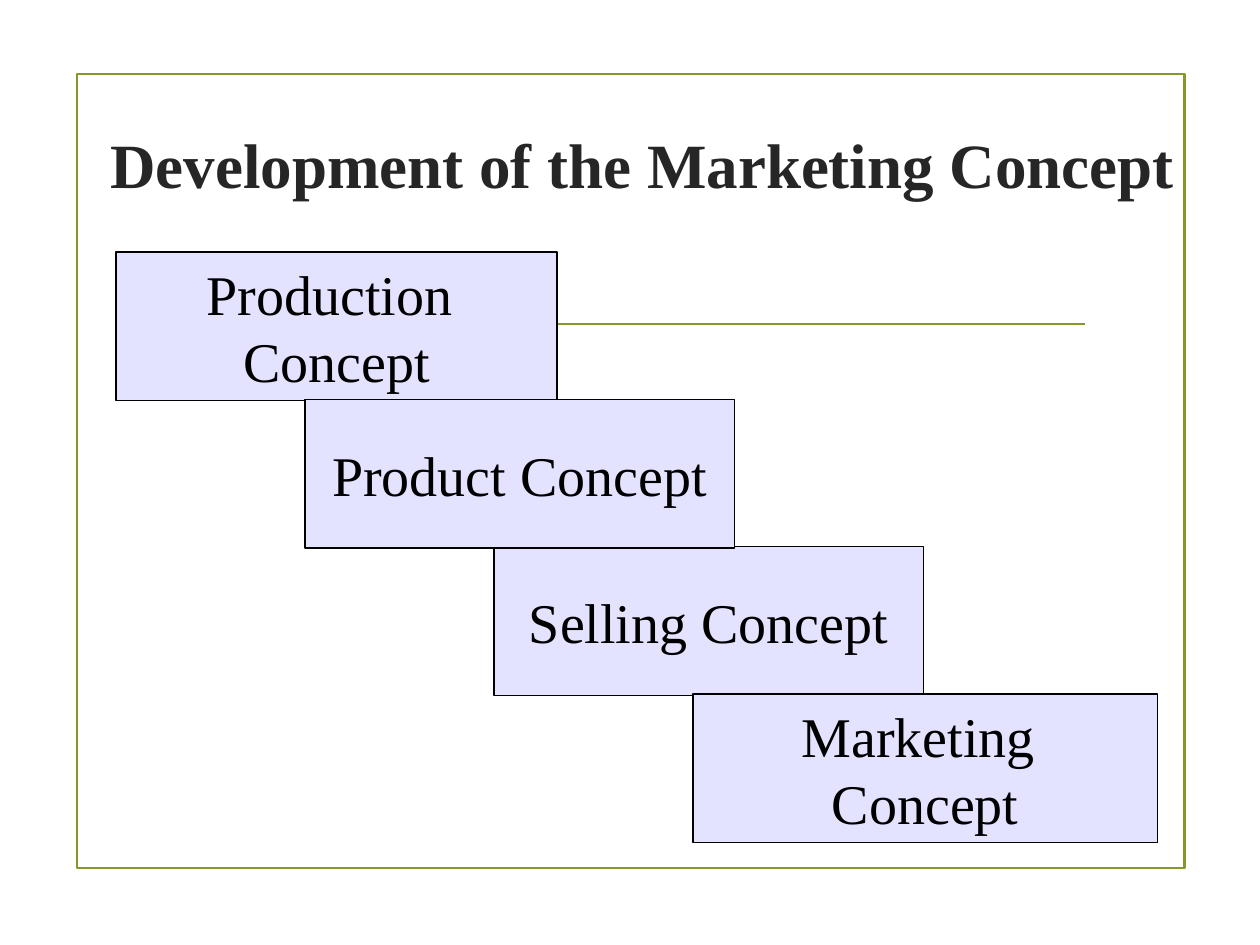
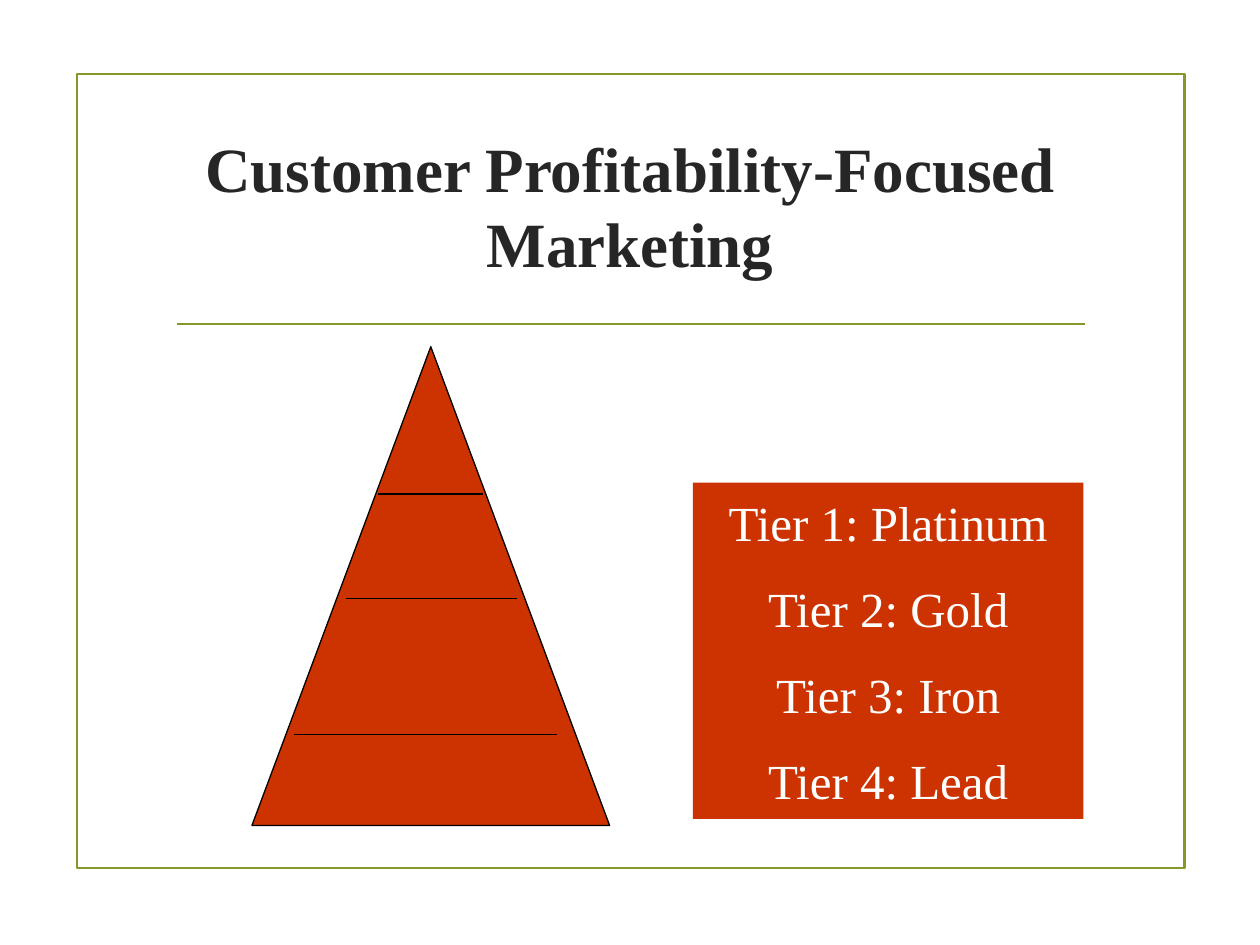
from dataclasses import dataclass

from lxml import etree
from pptx import Presentation
from pptx import util as u
from pptx.dml.color import RGBColor
from pptx.enum import shapes, text
from pptx.oxml import ns


@dataclass(frozen=True)
class Theme:
    font: str = "Times New Roman"
    green: str = "83992A"
    ink: str = "262626"
    black: str = "000000"
    white: str = "FFFFFF"
    lilac: str = "E3E3FF"
    red: str = "CC3300"
    title: int = 36
    step: int = 32
    tier: int = 28
    thin: float = 0.75
    rule: float = 1.25


T = Theme()
RECT = shapes.MSO_SHAPE.RECTANGLE


def cm(*vals):
    return [u.Cm(v) for v in vals]


def stroke(line, color, width):
    line.color.rgb = RGBColor.from_string(color)
    line.width = u.Pt(width)


def add_form(slide, kind, box, fill=None, line=None, width=T.thin):
    form = slide.shapes.add_shape(kind, *cm(*box))
    form.shadow.inherit = False
    if fill:
        form.fill.solid()
        form.fill.fore_color.rgb = RGBColor.from_string(fill)
    else:
        form.fill.background()
    if line:
        stroke(form.line, line, width)
    else:
        form.line.fill.background()
    return form


def add_rule(slide, left, top, width, color, weight):
    """Draw a level line."""
    line = slide.shapes.add_connector(
        shapes.MSO_CONNECTOR.STRAIGHT, *cm(left, top, left + width, top))
    stroke(line.line, color, weight)
    etree.SubElement(line.element.spPr, ns.qn("a:effectLst"))


def write(shape, lines, size, color, bold=False, wrap=True, gap=0):
    """Fill a shape with centred lines, set apart by gap points."""
    frame = shape.text_frame
    frame.word_wrap = wrap
    frame.vertical_anchor = text.MSO_ANCHOR.MIDDLE
    for i, words in enumerate(lines):
        para = frame.add_paragraph() if i else frame.paragraphs[0]
        para.text = words
        para.alignment = text.PP_ALIGN.CENTER
        para.space_before = u.Pt(gap if i else 0)
        para.font.name = T.font
        para.font.size = u.Pt(size)
        para.font.bold = bold
        para.font.color.rgb = RGBColor.from_string(color)


def add_base(deck, title, box):
    """Start a slide with its frame, rule and title."""
    slide = deck.slides.add_slide(deck.slide_layouts[6])
    left, top, width, height = 1.55, 1.5, 22.33, 16
    add_form(slide, RECT, (left, top, width, height), line=T.green, width=T.rule)
    add_rule(slide, left + 2.01, top + 5.03, 18.31, T.green, T.rule)
    head = slide.shapes.add_textbox(*cm(*box))
    write(head, [title], T.title, T.ink, bold=True)
    return slide


def add_stairs(slide, left, top, across, down):
    """Place concepts on a falling stair, from back to front."""
    # Stair number, lines, width, nudge to the right
    steps = [
        (0, ["Production ", "Concept"], 8.89, 0),
        (2, ["Selling Concept"], 8.66, 0),
        (1, ["Product Concept"], 8.66, 0),
        (3, ["Marketing ", "Concept"], 9.37, 0.2),
    ]
    for i, lines, width, nudge in steps:
        box = (left + i * across + nudge, top + i * down, width, 3)
        step = add_form(slide, RECT, box, T.lilac, T.black)
        write(step, lines, T.step, T.black, wrap=False)


def add_cone(slide, left, top, width, height):
    """Draw the pyramid and the cuts between its tiers."""
    kind = shapes.MSO_SHAPE.ISOSCELES_TRIANGLE
    add_form(slide, kind, (left, top, width, height), T.red, T.black)
    for x, y, span in [(2.54, 2.97, 2.11), (1.9, 5.08, 3.45), (0.84, 7.82, 5.31)]:
        add_rule(slide, left + x, top + y, span, T.black, T.thin)


def add_tiers(slide, *box):
    """List the tiers on a panel."""
    names = ["Platinum", "Gold", "Iron", "Lead"]
    lines = [f"Tier {i}: {name}" for i, name in enumerate(names, 1)]
    write(add_form(slide, RECT, box, T.red), lines, T.tier, T.white, gap=15.4)


def main():
    deck = Presentation()
    deck.slide_width, deck.slide_height = cm(25.4, 19.05)

    # Concepts
    slide = add_base(deck, "Development of the Marketing Concept",
                     (1.7, 1.7, 22.5, 3.18))
    add_stairs(slide, 2.34, 5.08, 3.81, 2.97)

    # Customer tiers
    slide = add_base(deck, "Customer Profitability-Focused Marketing",
                     (1.91, 2.54, 21.59, 3.18))
    add_cone(slide, 5.08, 6.99, 7.21, 9.65)
    add_tiers(slide, 13.97, 9.73, 7.87, 6.78)

    deck.save("out.pptx")


if __name__ == "__main__":
    main()
